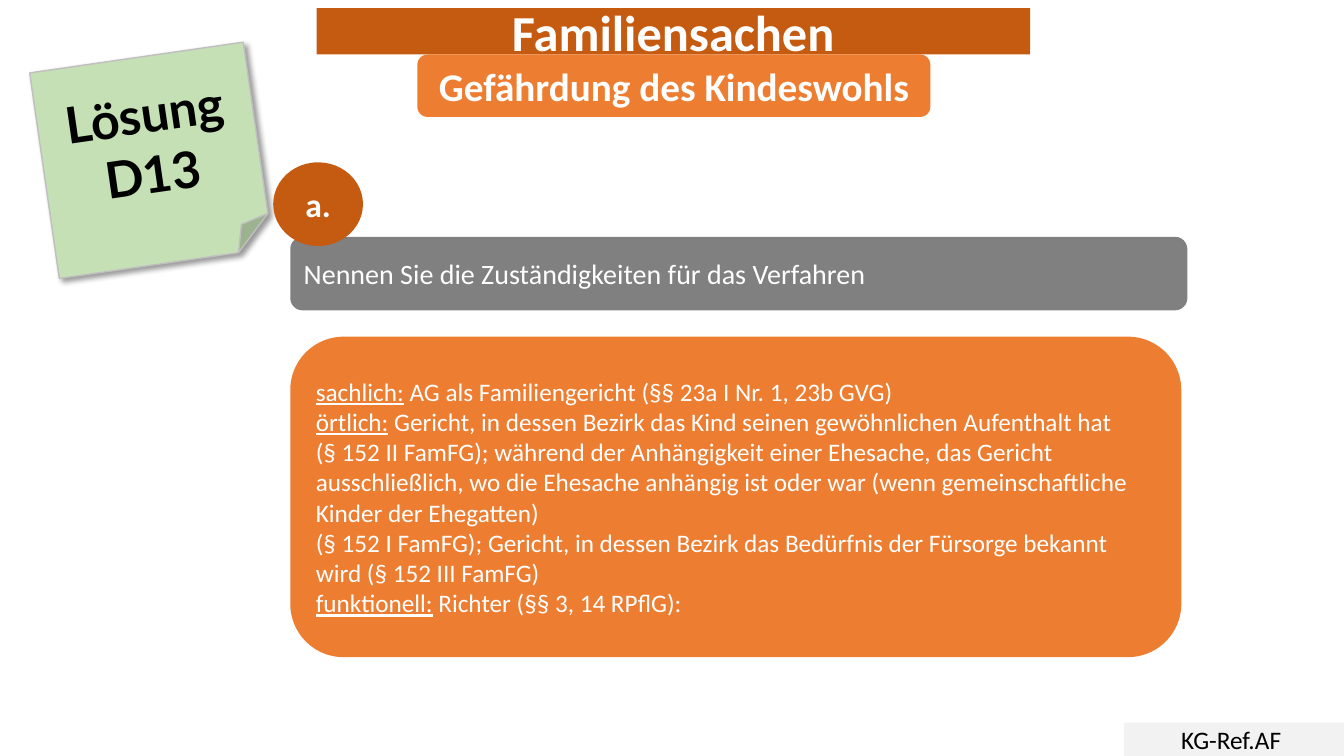
from dataclasses import dataclass

from lxml import etree
from pptx import Presentation
from pptx.dml.color import RGBColor
from pptx.enum.shapes import MSO_SHAPE
from pptx.enum.text import MSO_ANCHOR, MSO_AUTO_SIZE, PP_ALIGN
from pptx.oxml.ns import qn
from pptx.util import Inches, Pt

ROUND, NOTE = MSO_SHAPE.ROUNDED_RECTANGLE, MSO_SHAPE.FOLDED_CORNER
CIRCLE, RECT = MSO_SHAPE.FLOWCHART_CONNECTOR, MSO_SHAPE.RECTANGLE
LEFT, CENTER = PP_ALIGN.LEFT, PP_ALIGN.CENTER
MIDDLE, NO_FIT = MSO_ANCHOR.MIDDLE, MSO_AUTO_SIZE.NONE


@dataclass(frozen=True)
class Theme:
    font: str = "Calibri"
    note_font: str = "Lato"
    dark: str = "C55A11"
    orange: str = "ED7D31"
    gray: str = "808080"
    light: str = "F2F2F2"
    green: str = "C5E0B4"
    edge: str = "BFBFBF"
    white: str = "FFFFFF"
    black: str = "000000"
    title: int = 36
    subtitle: int = 28
    badge: int = 24
    question: int = 20
    body: int = 18


T = Theme()

# Content: paragraphs are lists of runs, each (text, underlined); BREAK is a line break
BREAK = None
TITLE = [[("Familiensachen", False)]]
SUBTITLE = [[("Gefährdung des Kindeswohls", False)]]
SOLUTION = [[("Lösung", False)], [("D13", False)]]
QUESTION = [[("Nennen Sie die Zuständigkeiten für das Verfahren", False)]]
BADGE = [[("a.", False)]]
ANSWER = [
    [("sachlich:", True),
     (" AG als Familiengericht (§§ 23a I Nr. 1, 23b GVG)", False)],
    [("örtlich:", True),
     (" Gericht, in dessen Bezirk das Kind seinen gewöhnlichen Aufenthalt hat ", False),
     BREAK,
     ("(§ 152 II FamFG); während der Anhängigkeit einer Ehesache, das Gericht "
      "ausschließlich, wo die Ehesache anhängig ist oder war (wenn gemeinschaftliche "
      "Kinder der Ehegatten) ", False),
     BREAK,
     ("(§ 152 I FamFG); Gericht, in dessen Bezirk das Bedürfnis der Fürsorge "
      "bekannt wird (§ 152 III FamFG)", False)],
    [("funktionell:", True), (" Richter (§§ 3, 14 RPflG):", False)],
]
FOOTER = [[("KG-Ref.AF ", False)]]

# Layout: left, top, width, height in percent of the slide
COLUMN = 21.6
TITLE_BOX = (23.55, 1.07, 53.1, 6.13)
NOTE_BOX = (3.23, 7.47, 16.05, 27.47)
QUESTION_BOX = (COLUMN, 31.33, 66.75, 9.73)
BADGE_BOX = (20.33, 21.47, 6.68, 11.07)
ANSWER_BOX = (COLUMN, 44.53, 66.3, 42.4)
SUBTITLE_BOX = (31.05, 7.2, 38.18, 8.27)
FOOTER_BOX = (83.63, 95.6, 16.37, 4.4)

prs = Presentation()
prs.slide_width, prs.slide_height = Inches(13.33), Inches(7.5)
s = prs.slides.add_slide(prs.slide_layouts[5])


def rgb(color):
    return RGBColor.from_string(color)


def place(box):
    sides = (prs.slide_width, prs.slide_height) * 2
    return [int(share * side / 100) for share, side in zip(box, sides)]


def write(sp, paragraphs, size, color=T.white, bold=False, align=CENTER, font=T.font):
    tf = sp.text_frame
    tf.word_wrap, tf.auto_size, tf.vertical_anchor = True, NO_FIT, MIDDLE
    for i, runs in enumerate(paragraphs):
        p = tf.add_paragraph() if i else tf.paragraphs[0]
        p.alignment = align
        for run in runs:
            if run is BREAK:
                p.add_line_break()
                continue
            r = p.add_run()
            r.text, r.font.underline = run
            r.font.name, r.font.size, r.font.bold = font, Pt(size), bold
            r.font.color.rgb = rgb(color)


def paint(sp, fill):
    sp.fill.solid()
    sp.fill.fore_color.rgb = rgb(fill)
    sp.line.fill.background()


def block(kind, box, fill, paragraphs, size, **style):
    sp = s.shapes.add_shape(kind, *place(box))
    sp.shadow.inherit = False
    paint(sp, fill)
    write(sp, paragraphs, size, **style)
    return sp


def drop_shadow(sp, color, alpha, blur, distance, angle):
    effects = sp._element.spPr.find(qn("a:effectLst"))
    shadow = etree.SubElement(effects, qn("a:outerShdw"), blurRad=str(Pt(blur)),
                              dist=str(Pt(distance)), dir=str(angle * 60000),
                              algn="tl", rotWithShape="0")
    tint = etree.SubElement(shadow, qn("a:srgbClr"), val=color)
    etree.SubElement(tint, qn("a:alpha"), val=str(alpha * 1000))


# Title banner: the placeholder gets rounded corners
title = s.shapes.title
title.left, title.top, title.width, title.height = place(TITLE_BOX)
outline = etree.SubElement(title._element.spPr, qn("a:prstGeom"), prst="roundRect")
etree.SubElement(outline, qn("a:avLst"))
paint(title, T.dark)
write(title, TITLE, T.title, bold=True)

# Sticky note
note = block(NOTE, NOTE_BOX, T.green, SOLUTION, T.title,
             color=T.black, bold=True, font=T.note_font)
note.rotation = 351.8
note.line.color.rgb, note.line.width = rgb(T.edge), Pt(1)
drop_shadow(note, T.black, alpha=40, blur=4, distance=3, angle=45)

# Question with its badge, then the answer
block(ROUND, QUESTION_BOX, T.gray, QUESTION, T.question, align=LEFT)
block(CIRCLE, BADGE_BOX, T.dark, BADGE, T.badge, bold=True)
block(ROUND, ANSWER_BOX, T.orange, ANSWER, T.body, align=LEFT)

# Subtitle banner and footer
block(ROUND, SUBTITLE_BOX, T.orange, SUBTITLE, T.subtitle, bold=True)
block(RECT, FOOTER_BOX, T.light, FOOTER, T.body, color=T.black)

prs.save("out.pptx")
